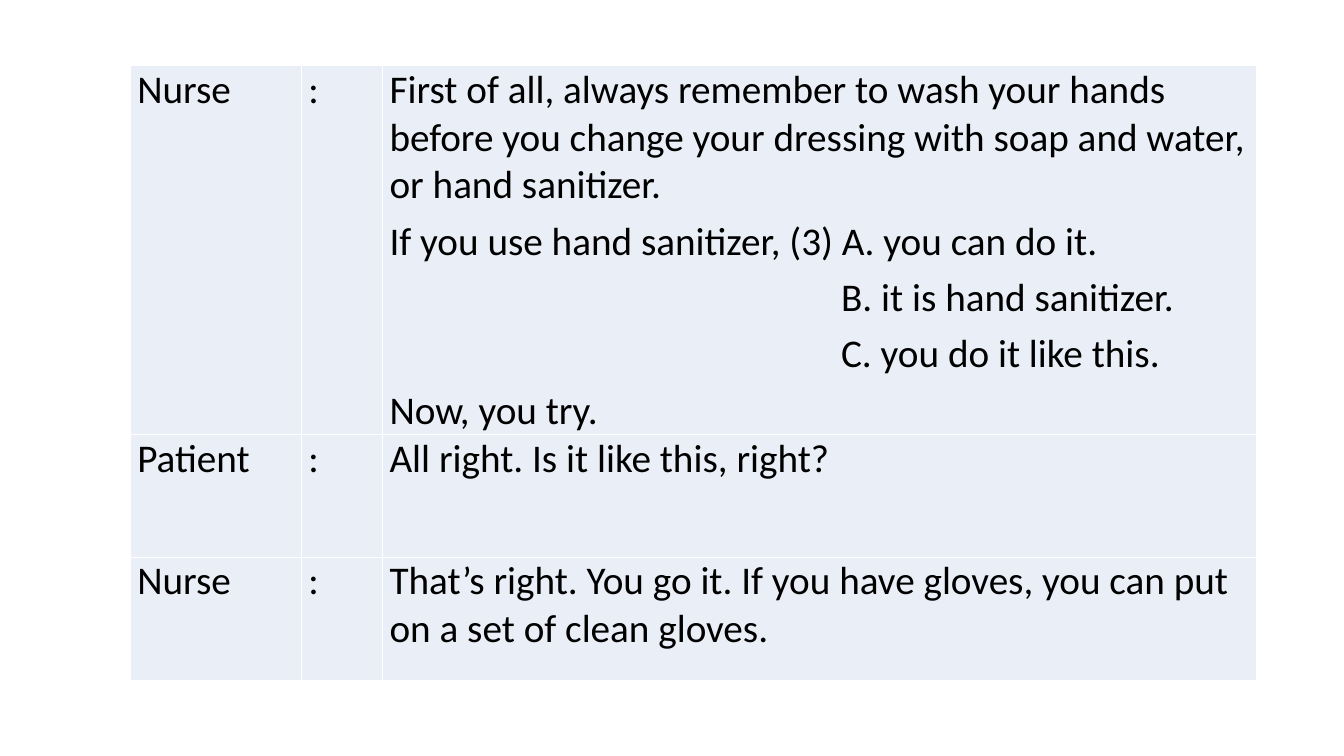
from lxml import etree
from pptx import Presentation
from pptx import util as u
from pptx.dml.color import RGBColor
from pptx.oxml.ns import qn

PALE, WHITE, BLACK = "EAEFF7", "FFFFFF", "000000"


def color(code):
    return RGBColor.from_string(code)


def write(par, words, size=28, font="Calibri", ink=BLACK, gap=3, indent=0):
    run = par.add_run()
    run.text = words
    run.font.size = u.Pt(size)
    run.font.name = font
    run.font.color.rgb = color(ink)
    par.space_before = par.space_after = u.Pt(gap)
    if indent:
        par._p.get_or_add_pPr().set("marL", str(u.Cm(indent)))


# Dialogue: speaker, then lines with their left indent in cm
OPTION = 11.38
talk = [
    ("Nurse", [
        ("First of all, always remember to wash your hands before you change "
         "your dressing with soap and water, or hand sanitizer.", 0),
        ("If you use hand sanitizer, (3) A. you can do it.", 0),
        ("B. it is hand sanitizer.", OPTION),
        ("C. you do it like this.", OPTION),
        ("Now, you try.", 0),
    ]),
    ("Patient", [("All right. Is it like this, right?", 0)]),
    ("Nurse", [("That’s right. You go it. If you have gloves, you can put on "
                "a set of clean gloves.", 0)]),
]
widths = [4.31, 2.05, 22.04]
heights = [9.27, 3.09, 3.09]

# Slide
deck = Presentation()
deck.slide_width, deck.slide_height = u.Cm(33.87), u.Cm(19.05)
slide = deck.slides.add_slide(deck.slide_layouts[6])

# Table grid
table = slide.shapes.add_table(
    len(talk), len(widths), u.Cm(3.28), u.Cm(1.66),
    u.Cm(sum(widths)), u.Cm(sum(heights))).table
table.first_row = table.horz_banding = False
for col, width in zip(table.columns, widths):
    col.width = u.Cm(width)
for row, height in zip(table.rows, heights):
    row.height = u.Cm(height)

# Cells
for row, (name, lines) in zip(table.rows, talk):
    for cell, items in zip(row.cells, ([(name, 0)], [(":", 0)], lines)):
        cell.margin_left = cell.margin_right = u.Cm(0.18)
        cell.margin_top = cell.margin_bottom = 0

        # White borders, then the fill
        props = cell._tc.get_or_add_tcPr()
        for side in "LRTB":
            edge = etree.SubElement(props, qn(f"a:ln{side}"), w=str(u.Pt(1)))
            paint = etree.SubElement(edge, qn("a:solidFill"))
            etree.SubElement(paint, qn("a:srgbClr"), val=WHITE)
        cell.fill.solid()
        cell.fill.fore_color.rgb = color(PALE)

        # Text
        frame = cell.text_frame
        for i, (words, indent) in enumerate(items):
            par = frame.add_paragraph() if i else frame.paragraphs[0]
            write(par, words, indent=indent)

deck.save("out.pptx")
